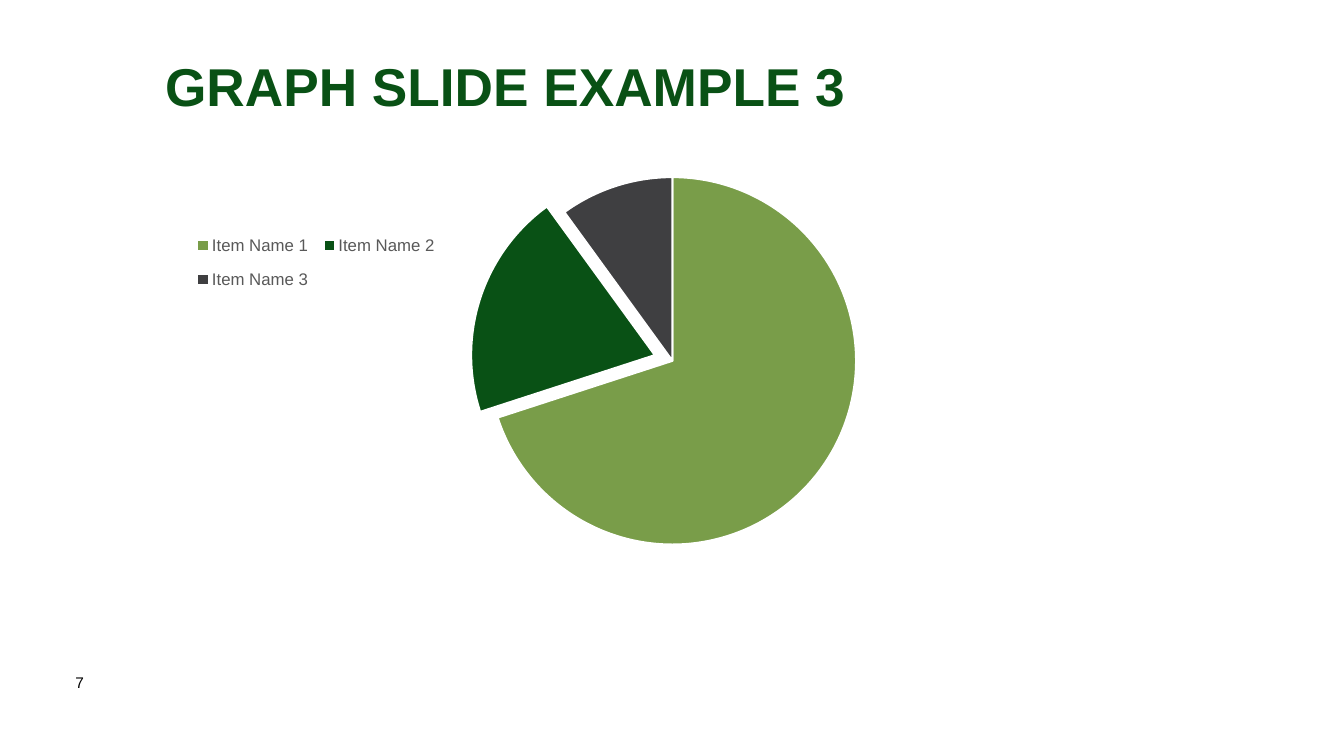
from pptx import Presentation
from pptx.chart.data import CategoryChartData
from pptx.dml.color import RGBColor
from pptx.enum.chart import XL_CHART_TYPE as ChartType, XL_LEGEND_POSITION as LegendPosition
from pptx.enum.text import MSO_ANCHOR as Anchor
from pptx.oxml import parse_xml
from pptx.oxml.ns import nsdecls, qn
from pptx.util import Cm, Pt

GREEN = RGBColor(0x09, 0x51, 0x15)
LIGHT_GREEN = RGBColor(0x79, 0x9D, 0x49)
CHARCOAL = RGBColor(0x3F, 0x3F, 0x41)
GREY = RGBColor(0x59, 0x59, 0x59)
BLACK = RGBColor(0, 0, 0)
WHITE = RGBColor(0xFF, 0xFF, 0xFF)


class SlideBuilder:
    font_name = "Arial"

    def __init__(self, slide):
        self.slide = slide

    def style(self, font, size, color, bold=False):
        font.name = self.font_name
        font.size = Pt(size)
        font.color.rgb = color
        font.bold = bold

    def text(self, box, text, size, color, bold=False, anchor=Anchor.TOP, spacing=1.0):
        shape = self.slide.shapes.add_textbox(*map(Cm, box))
        frame = shape.text_frame
        frame.word_wrap = True
        frame.vertical_anchor = anchor
        paragraph = frame.paragraphs[0]
        paragraph.line_spacing = spacing
        run = paragraph.add_run()
        run.text = text
        self.style(run.font, size, color, bold)

    def place(self, parent, index, target, box):
        for old_layout in parent.findall(qn("c:layout")):
            parent.remove(old_layout)
        sizes = "".join(f'<c:{name} val="{value}"/>' for name, value in zip("xywh", box))
        parent.insert(index, parse_xml(
            f'<c:layout {nsdecls("c")}><c:manualLayout>{target}'
            f'<c:xMode val="edge"/><c:yMode val="edge"/>{sizes}'
            '</c:manualLayout></c:layout>'))

    def pie(self, box, items, exploded, plot_box, legend_box):
        data = CategoryChartData()
        data.categories = [name for name, _, _ in items]
        data.add_series("Series 1", [value for _, value, _ in items])
        chart = self.slide.shapes.add_chart(ChartType.PIE, *map(Cm, box), data).chart
        chart.has_title = False
        self.style(chart.font, 10, BLACK)
        chart.plots[0].vary_by_categories = True
        series = chart.plots[0].series[0]
        for index, (_, _, color) in enumerate(items):
            point_format = series.points[index].format
            point_format.fill.solid()
            point_format.fill.fore_color.rgb = color
            point_format.line.color.rgb = WHITE
            point_format.line.width = Pt(1.5)
        slice_element = series._element.findall(qn("c:dPt"))[exploded]
        slice_element.find(qn("c:spPr")).addprevious(
            parse_xml(f'<c:explosion {nsdecls("c")} val="10"/>'))
        chart.has_legend = True
        legend = chart.legend
        legend.position = LegendPosition.BOTTOM
        legend.include_in_layout = False
        self.style(legend.font, 12, GREY)
        self.place(legend._element, 1, "", legend_box)
        plot_area = chart._chartSpace.find(qn("c:chart")).find(qn("c:plotArea"))
        self.place(plot_area, 0, '<c:layoutTarget val="inner"/>', plot_box)


def main():
    presentation = Presentation()
    presentation.slide_width = Cm(33.87)
    presentation.slide_height = Cm(19.05)
    builder = SlideBuilder(presentation.slides.add_slide(presentation.slide_layouts[6]))
    builder.text((1.65, 16.84, 1.47, 1.37), "7", 11, BLACK)
    builder.pie(
        (3.94, 4.14, 26.01, 10.77),
        [("Item Name 1", 70, LIGHT_GREEN),
         ("Item Name 2", 20, GREEN),
         ("Item Name 3", 10, CHARCOAL)],
        exploded=1,
        plot_box=(0.32, 0.03, 0.36, 0.86),
        legend_box=(0.03, 0.13, 0.25, 0.2))
    builder.text((3.91, 1.17, 25.6, 2.18), "GRAPH SLIDE EXAMPLE 3", 38, GREEN,
                 bold=True, anchor=Anchor.MIDDLE, spacing=0.9)
    presentation.save("out.pptx")


if __name__ == "__main__":
    main()
